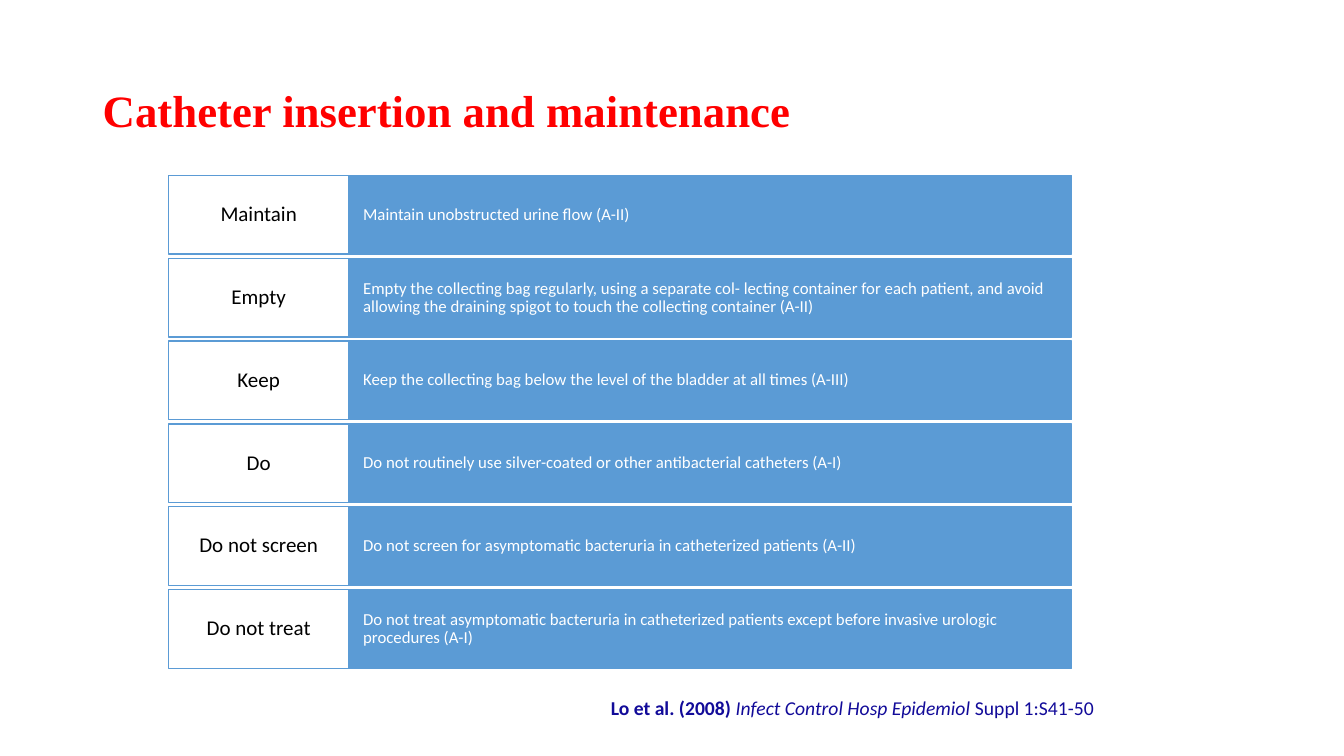
from pptx import Presentation
from pptx.dml.color import RGBColor
from pptx.enum.shapes import MSO_SHAPE as Shape
from pptx.enum.text import MSO_ANCHOR as Anchor, PP_ALIGN as Align
from pptx.util import Inches, Pt

COLORS = {
    "title": "FF0000",
    "blue": "5B9BD5",
    "white": "FFFFFF",
    "black": "000000",
    "citation": "120B99",
}

GUIDELINES = [
    ("Maintain", "Maintain unobstructed urine ﬂow (A-II)"),
    ("Empty", "Empty the collecting bag regularly, using a separate col- lecting container "
     "for each patient, and avoid allowing the draining spigot to touch the collecting "
     "container (A-II)"),
    ("Keep", "Keep the collecting bag below the level of the bladder at all times (A-III)"),
    ("Do", "Do not routinely use silver-coated or other antibacterial catheters (A-I)"),
    ("Do not screen", "Do not screen for asymptomatic bacteruria in catheterized patients (A-II)"),
    ("Do not treat", "Do not treat asymptomatic bacteruria in catheterized patients except "
     "before invasive urologic procedures (A-I)"),
]


def color(name):
    """Return the named colour."""
    return RGBColor.from_string(COLORS[name])


def write(box, text, *, size, ink, font="Calibri", bold=False, italic=False,
          align=Align.LEFT, spacing=1.0, margins=(0.1, 0.05)):
    """Append a formatted run to the first paragraph of a box."""
    frame = box.text_frame
    frame.word_wrap = True
    frame.vertical_anchor = Anchor.MIDDLE
    frame.margin_left = frame.margin_right = Inches(margins[0])
    frame.margin_top = frame.margin_bottom = Inches(margins[1])
    para = frame.paragraphs[0]
    para.alignment = align
    para.line_spacing = spacing
    span = para.add_run()
    span.text = text
    span.font.name = font
    span.font.size = Pt(size)
    span.font.bold = bold
    span.font.italic = italic
    span.font.color.rgb = color(ink)


def add_box(page, left, top, width, height, fill, line=None):
    """Add a flat rectangle with an optional outline."""
    box = page.shapes.add_shape(Shape.RECTANGLE, Inches(left), Inches(top),
                                Inches(width), Inches(height))
    box.shadow.inherit = False
    box.fill.solid()
    box.fill.fore_color.rgb = color(fill)
    if line:
        box.line.color.rgb = color(line)
        box.line.width = Pt(1)
    else:
        box.line.fill.background()
    return box


def add_title(page, left, top, width, height):
    """Place the slide heading."""
    box = page.shapes.add_textbox(Inches(left), Inches(top), Inches(width), Inches(height))
    write(box, "Catheter insertion and maintenance", size=32, ink="title",
          font="Times New Roman", bold=True, spacing=0.9)


def add_guidelines(page, left, top, width, height):
    """Stack one keyword and advice row per guideline."""
    gap = 0.04
    row_height = (height - gap * (len(GUIDELINES) - 1)) / len(GUIDELINES)
    key_width = width * 0.2
    for index, (keyword, advice) in enumerate(GUIDELINES):
        row_top = top + index * (row_height + gap)
        advice_box = add_box(page, left + key_width, row_top, width - key_width,
                             row_height, "blue", "blue")
        write(advice_box, advice, size=12, ink="white", spacing=0.9, margins=(0.14, 0.2))
        key_box = add_box(page, left, row_top, key_width, row_height, "white", "blue")
        write(key_box, keyword, size=15, ink="black", align=Align.CENTER,
              spacing=0.9, margins=(0.09, 0.08))


def add_citation(page, left, top, width, height):
    """Place the reference line."""
    box = add_box(page, left, top, width, height, "white")
    write(box, "Lo et al. (2008) ", size=14, ink="citation", bold=True)
    write(box, "Infect Control Hosp Epidemiol ", size=14, ink="citation", italic=True)
    write(box, "Suppl 1:S41-50", size=14, ink="citation")


def main():
    """Build and save the slide."""
    deck = Presentation()
    deck.slide_width = Inches(13.33)
    deck.slide_height = Inches(7.5)
    page = deck.slides.add_slide(deck.slide_layouts[6])
    add_title(page, 0.92, 0.4, 11.5, 1.45)
    add_guidelines(page, 1.67, 1.74, 8.96, 4.89)
    add_citation(page, 5.96, 6.85, 5.08, 0.34)
    deck.save("out.pptx")


if __name__ == "__main__":
    main()
